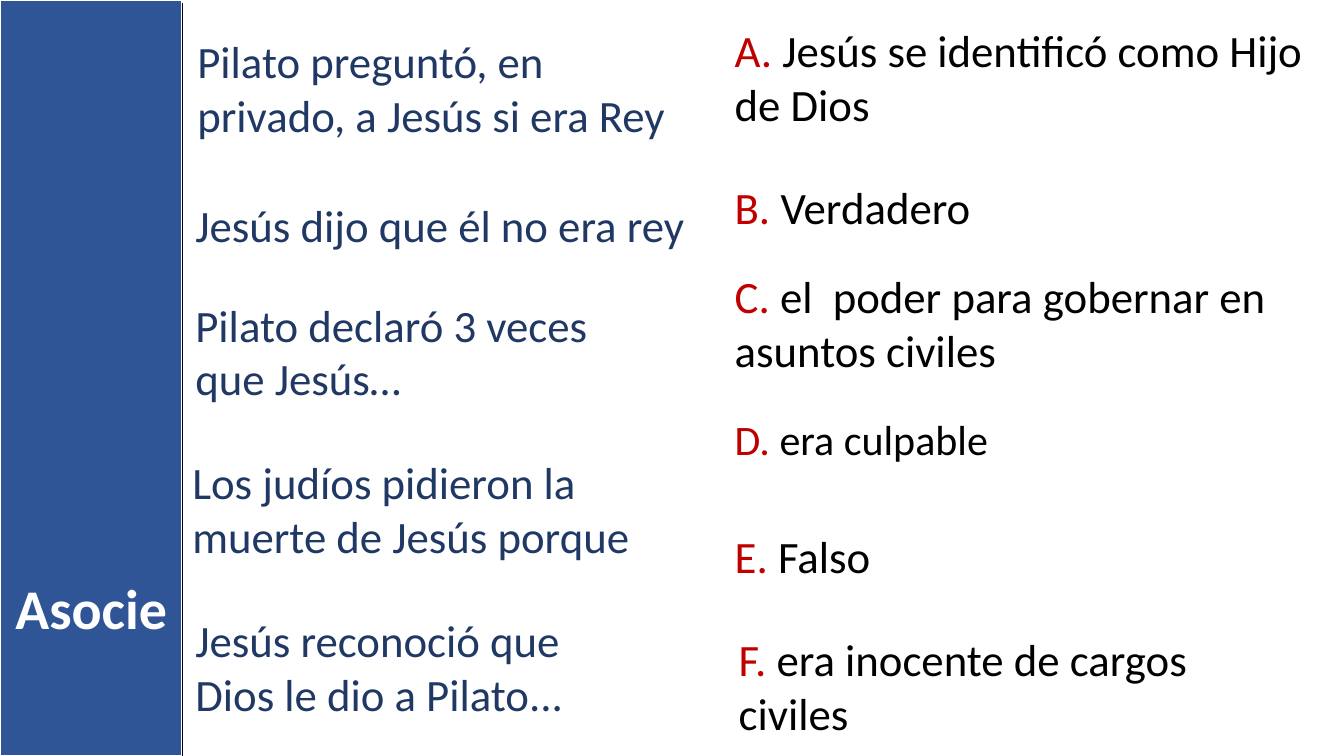
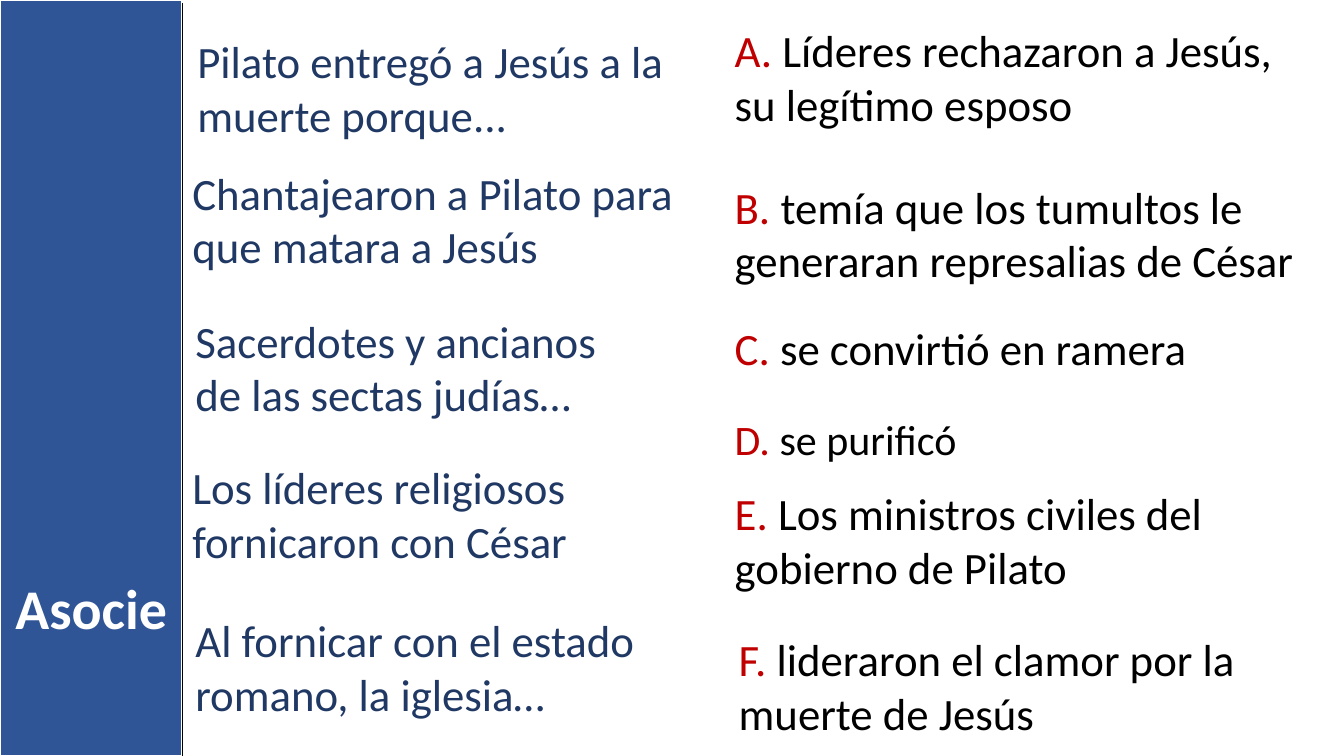
from pptx import Presentation
from pptx.dml.color import RGBColor
from pptx.enum.shapes import MSO_CONNECTOR, MSO_SHAPE
from pptx.enum.text import MSO_ANCHOR, MSO_AUTO_SIZE, PP_ALIGN
from pptx.oxml.ns import qn
from pptx.util import Pt
from lxml import etree

RECTANGLE = MSO_SHAPE.RECTANGLE
STRAIGHT = MSO_CONNECTOR.STRAIGHT
TOP = MSO_ANCHOR.TOP
CENTER = PP_ALIGN.CENTER
NO_AUTOFIT = MSO_AUTO_SIZE.NONE

# Shared style, lengths in points
COLORS = {"band": "2F5597", "prompt": "203864", "letter": "C00000",
          "answer": "000000", "white": "FFFFFF", "edge": "000000"}
FONT = "Calibri"
PAGE_WIDTH, PAGE_HEIGHT = 960, 540
BAND_WIDTH = 130.3
TITLE_TOP, TITLE_HEIGHT, TITLE_SIZE = 406, 55.4, 40
TEXT_SIZE = 32
LINE_FACTOR, INSETS = 1.22, 7.2
TITLE_ONLY = 5

# Answer slots: left, width, text size
ANSWER_SLOTS = {
    "A": (517.7, 429.1, TEXT_SIZE),
    "B": (517.7, 429.1, TEXT_SIZE),
    "C": (517.7, 403.2, TEXT_SIZE),
    "D": (517.7, 376.6, 30),
    "E": (517.7, 408.2, TEXT_SIZE),
    "F": (520.6, 408.2, TEXT_SIZE),
}

# Prompts: left, top, width, lines, text. Answers: letter, top, lines, text.
PAGES = [
    {
        "title": "Asocie",
        "prompts": [
            (133.9, 20.9, 372.2, 2, "Pilato preguntó, en privado, a Jesús si era Rey"),
            (132.5, 137.5, 371.5, 1, "Jesús dijo que él no era rey"),
            (132.5, 208.8, 321.1, 2, "Pilato declaró 3 veces que Jesús…"),
            (130.3, 321.1, 355.7, 2, "Los judíos pidieron la muerte de Jesús porque"),
            (132.5, 434.2, 321.1, 2, "Jesús reconoció que Dios le dio a Pilato..."),
        ],
        "answers": [
            ("A", 13, 2, "Jesús se identificó como Hijo de Dios"),
            ("B", 124.6, 1, "Verdadero"),
            ("C", 188.6, 2, "el  poder para gobernar en asuntos civiles"),
            ("D", 291.6, 1, "era culpable"),
            ("E", 374.4, 1, "Falso"),
            ("F", 447.8, 2, "era inocente de cargos civiles"),
        ],
    },
    {
        "title": "Asocie",
        "prompts": [
            (133.9, 20.9, 372.2, 2, "Pilato entregó a Jesús a la muerte porque..."),
            (130.3, 114.5, 371.5, 2, "Chantajearon a Pilato para que matara a Jesús"),
            (132.5, 220.3, 321.1, 2, "Sacerdotes y ancianos de las sectas judías…"),
            (130.3, 324.7, 355.7, 2, "Los líderes religiosos fornicaron con César"),
            (132.5, 434.2, 341.3, 2, "Al fornicar con el estado romano, la iglesia…"),
        ],
        "answers": [
            ("A", 13, 2, "Líderes rechazaron a Jesús, su legítimo esposo"),
            ("B", 124.6, 2, "temía que los tumultos le generaran represalias de César"),
            ("C", 225.4, 1, "se convirtió en ramera"),
            ("D", 291.6, 1, "se purificó"),
            ("E", 343.4, 2, "Los ministros civiles del gobierno de Pilato"),
            ("F", 447.8, 2, "lideraron el clamor por la muerte de Jesús"),
        ],
    },
]


def color(name):
    return RGBColor.from_string(COLORS[name])


def add_span(para, text, size, color_name, bold=False):
    span = para.add_run()
    span.text = text
    span.font.name = FONT
    span.font.size = Pt(size)
    span.font.bold = bold
    span.font.color.rgb = color(color_name)


def add_text(page, left, top, width, lines, size, spans):
    """Add a text box tall enough for its lines; spans are (text, colour)."""
    height = lines * size * LINE_FACTOR + INSETS
    box = page.shapes.add_textbox(Pt(left), Pt(top), Pt(width), Pt(height))
    box.text_frame.word_wrap = True
    para = box.text_frame.paragraphs[0]
    for text, color_name in spans:
        add_span(para, text, size, color_name)


def add_band(page):
    band = page.shapes.add_shape(RECTANGLE, 0, 0, Pt(BAND_WIDTH), Pt(PAGE_HEIGHT))
    band.shadow.inherit = False
    band.fill.solid()
    band.fill.fore_color.rgb = color("band")
    band.line.color.rgb = color("white")
    band.line.width = Pt(1.5)


def add_title(page, text):
    title = page.shapes.title
    title.left, title.top = Pt(0), Pt(TITLE_TOP)
    title.width, title.height = Pt(BAND_WIDTH), Pt(TITLE_HEIGHT)
    frame = title.text_frame
    frame.word_wrap = True
    frame.auto_size = NO_AUTOFIT
    frame.vertical_anchor = TOP
    para = frame.paragraphs[0]
    para.alignment = CENTER
    add_span(para, text, TITLE_SIZE, "white", bold=True)
    # Bring the title in front of the band
    title.element.getparent().append(title.element)


def add_edge(page):
    edge = page.shapes.add_connector(
        STRAIGHT, Pt(BAND_WIDTH), Pt(2), Pt(BAND_WIDTH), Pt(PAGE_HEIGHT))
    edge.line.color.rgb = color("edge")
    edge.line.width = Pt(1)
    etree.SubElement(edge.element.spPr, qn("a:effectLst"))


def build_page(deck, content):
    page = deck.slides.add_slide(deck.slide_layouts[TITLE_ONLY])
    add_band(page)
    # Left column: prompts
    for left, top, width, lines, text in content["prompts"]:
        add_text(page, left, top, width, lines, TEXT_SIZE, [(text, "prompt")])
    # Right column: lettered answers
    for letter, top, lines, text in content["answers"]:
        left, width, size = ANSWER_SLOTS[letter]
        add_text(page, left, top, width, lines, size,
                 [(f"{letter}. ", "letter"), (text, "answer")])
    add_title(page, content["title"])
    add_edge(page)


def main():
    deck = Presentation()
    deck.slide_width, deck.slide_height = Pt(PAGE_WIDTH), Pt(PAGE_HEIGHT)
    for content in PAGES:
        build_page(deck, content)
    deck.save("out.pptx")


if __name__ == "__main__":
    main()
